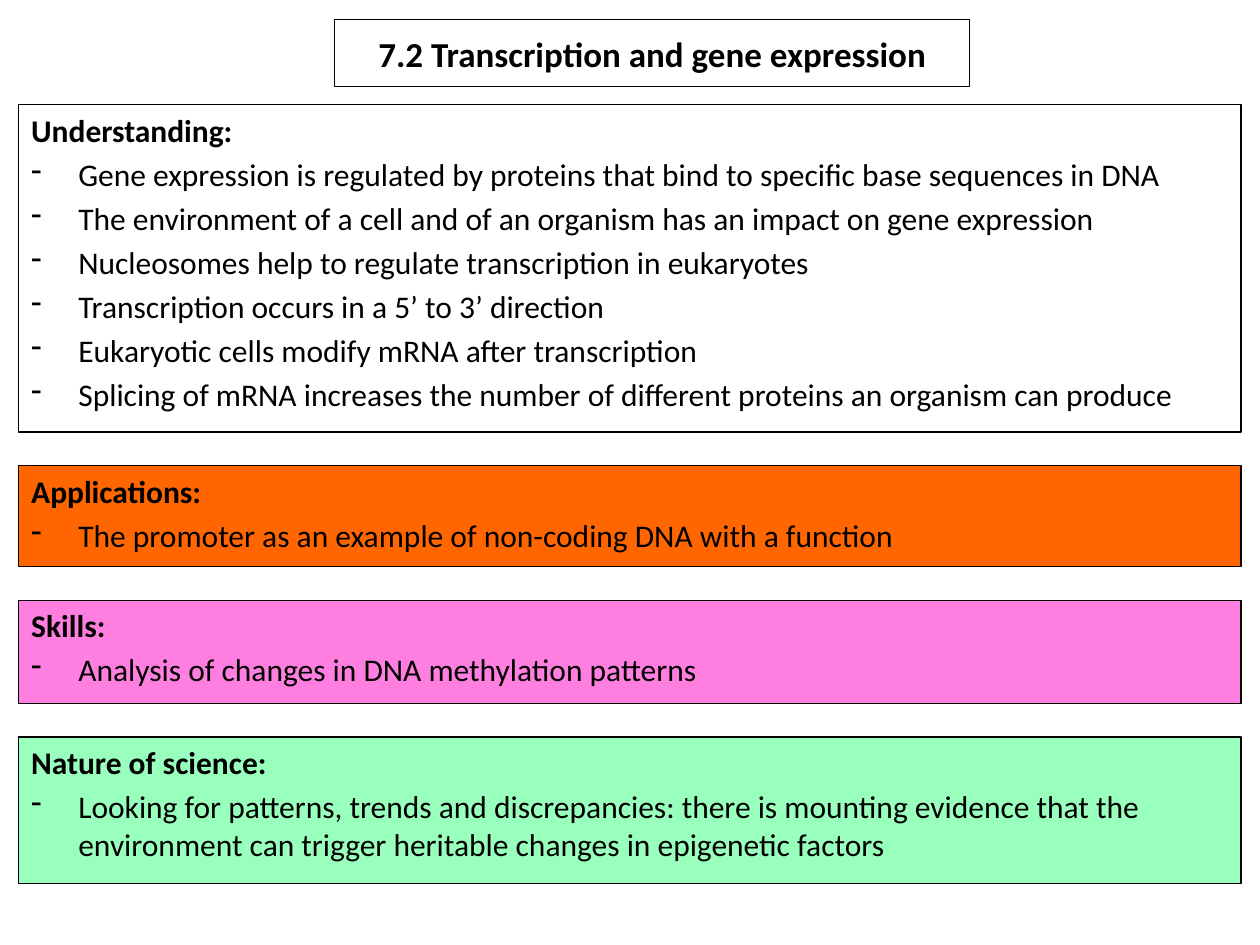
from dataclasses import dataclass

from lxml.etree import SubElement
from pptx import Presentation
from pptx.dml.color import RGBColor
from pptx.enum.shapes import MSO_SHAPE
from pptx.enum.text import MSO_ANCHOR, PP_ALIGN
from pptx.oxml.ns import qn
from pptx.util import Cm, Pt


@dataclass(frozen=True)
class Theme:
    font: str = "Calibri"
    ink: str = "000000"
    orange: str = "FF6600"
    pink: str = "FF7FE1"
    green: str = "98FFBC"
    title_size: float = 20
    body_size: float = 18
    line_width: float = 0.75
    item_space: float = 3.6
    indent: float = 0.95


THEME = Theme()
LEFT, TOP, WIDTH, GAP = 0.38, 2.11, 24.64, 0.68

SECTIONS = [
    ("Understanding:", None, 6.6, [
        "Gene expression is regulated by proteins that bind to specific base sequences in DNA",
        "The environment of a cell and of an organism has an impact on gene expression",
        "Nucleosomes help to regulate transcription in eukaryotes",
        "Transcription occurs in a 5’ to 3’ direction",
        "Eukaryotic cells modify mRNA after transcription",
        "Splicing of mRNA increases the number of different proteins an organism can produce",
    ]),
    ("Applications:", THEME.orange, 2.03, [
        "The promoter as an example of non-coding DNA with a function",
    ]),
    ("Skills:", THEME.pink, 2.08, [
        "Analysis of changes in DNA methylation patterns",
    ]),
    ("Nature of science:", THEME.green, 2.95, [
        "Looking for patterns, trends and discrepancies: there is mounting evidence "
        "that the environment can trigger heritable changes in epigenetic factors",
    ]),
]


def add_box(s, x, y, w, h, fill=None):
    sp = s.shapes.add_shape(MSO_SHAPE.RECTANGLE, Cm(x), Cm(y), Cm(w), Cm(h))
    sp.shadow.inherit = False
    if fill:
        sp.fill.solid()
        sp.fill.fore_color.rgb = RGBColor.from_string(fill)
    else:
        sp.fill.background()
    sp.line.color.rgb = RGBColor.from_string(THEME.ink)
    sp.line.width = Pt(THEME.line_width)
    sp.text_frame.word_wrap = True
    return sp


def set_text(p, text, size, bold=False, align=PP_ALIGN.LEFT):
    p.text = text
    p.alignment = align
    for r in p.runs:
        r.font.name = THEME.font
        r.font.size = Pt(size)
        r.font.bold = bold
        r.font.color.rgb = RGBColor.from_string(THEME.ink)


def add_dash(p):
    p.space_before = Pt(THEME.item_space)
    pPr = p._p.get_or_add_pPr()
    pPr.set("marL", str(Cm(THEME.indent)))
    pPr.set("indent", str(-Cm(THEME.indent)))
    SubElement(pPr, qn("a:buFontTx"))
    SubElement(pPr, qn("a:buChar")).set("char", "-")


def add_title(s, x, y, w, h, text):
    tf = add_box(s, x, y, w, h).text_frame
    tf.vertical_anchor = MSO_ANCHOR.MIDDLE
    set_text(tf.paragraphs[0], text, THEME.title_size, True, PP_ALIGN.CENTER)


def add_section(s, x, y, w, h, heading, fill, items):
    tf = add_box(s, x, y, w, h, fill).text_frame
    tf.vertical_anchor = MSO_ANCHOR.TOP
    set_text(tf.paragraphs[0], heading, THEME.body_size, True)
    for item in items:
        p = tf.add_paragraph()
        set_text(p, item, THEME.body_size)
        add_dash(p)


def main():
    prs = Presentation()
    prs.slide_width, prs.slide_height = Cm(25.4), Cm(19.05)
    s = prs.slides.add_slide(prs.slide_layouts[6])
    add_title(s, 6.75, 0.4, 12.8, 1.35, "7.2 Transcription and gene expression")
    y = TOP
    for heading, fill, h, items in SECTIONS:
        add_section(s, LEFT, y, WIDTH, h, heading, fill, items)
        y += h + GAP
    prs.save("out.pptx")


if __name__ == "__main__":
    main()
